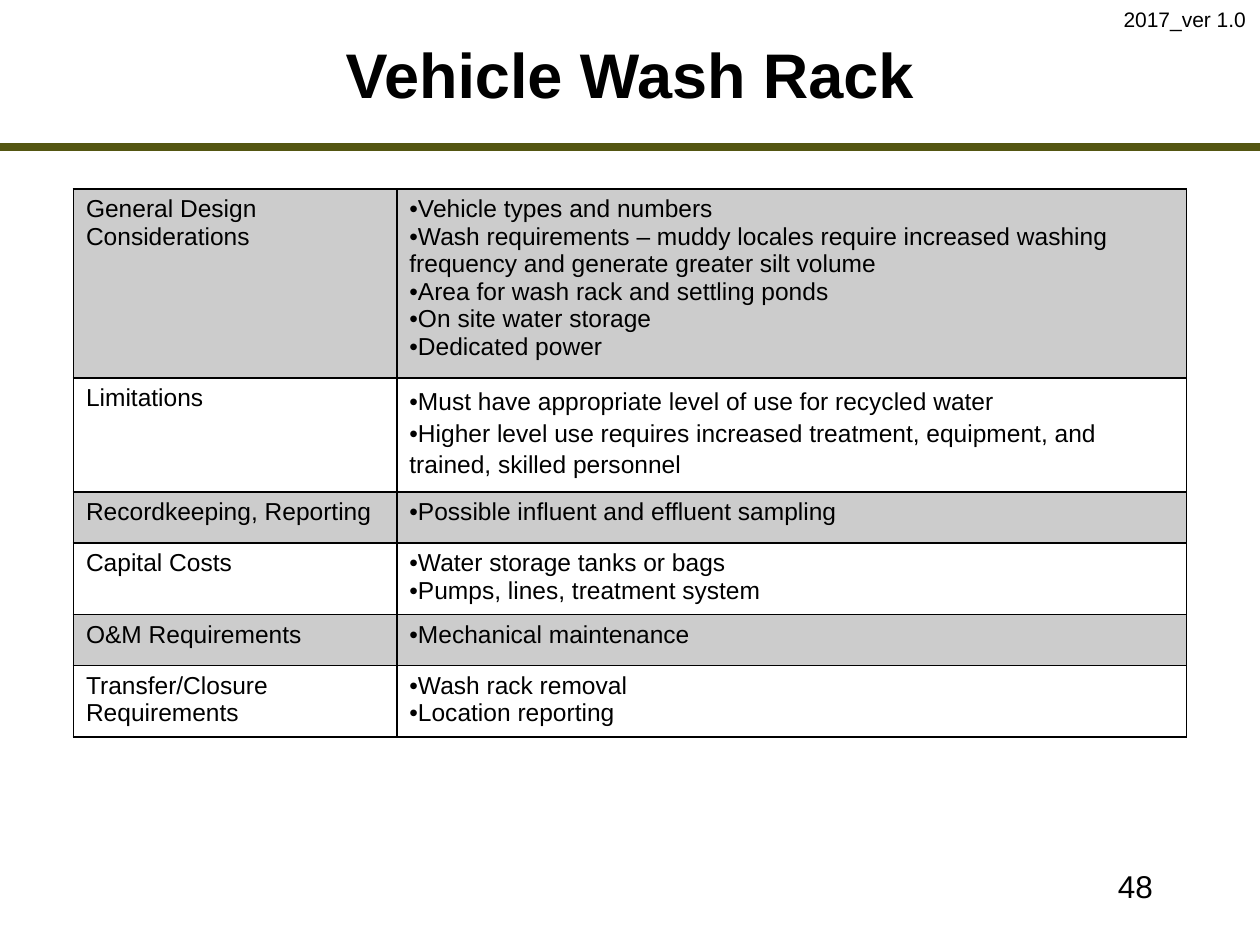
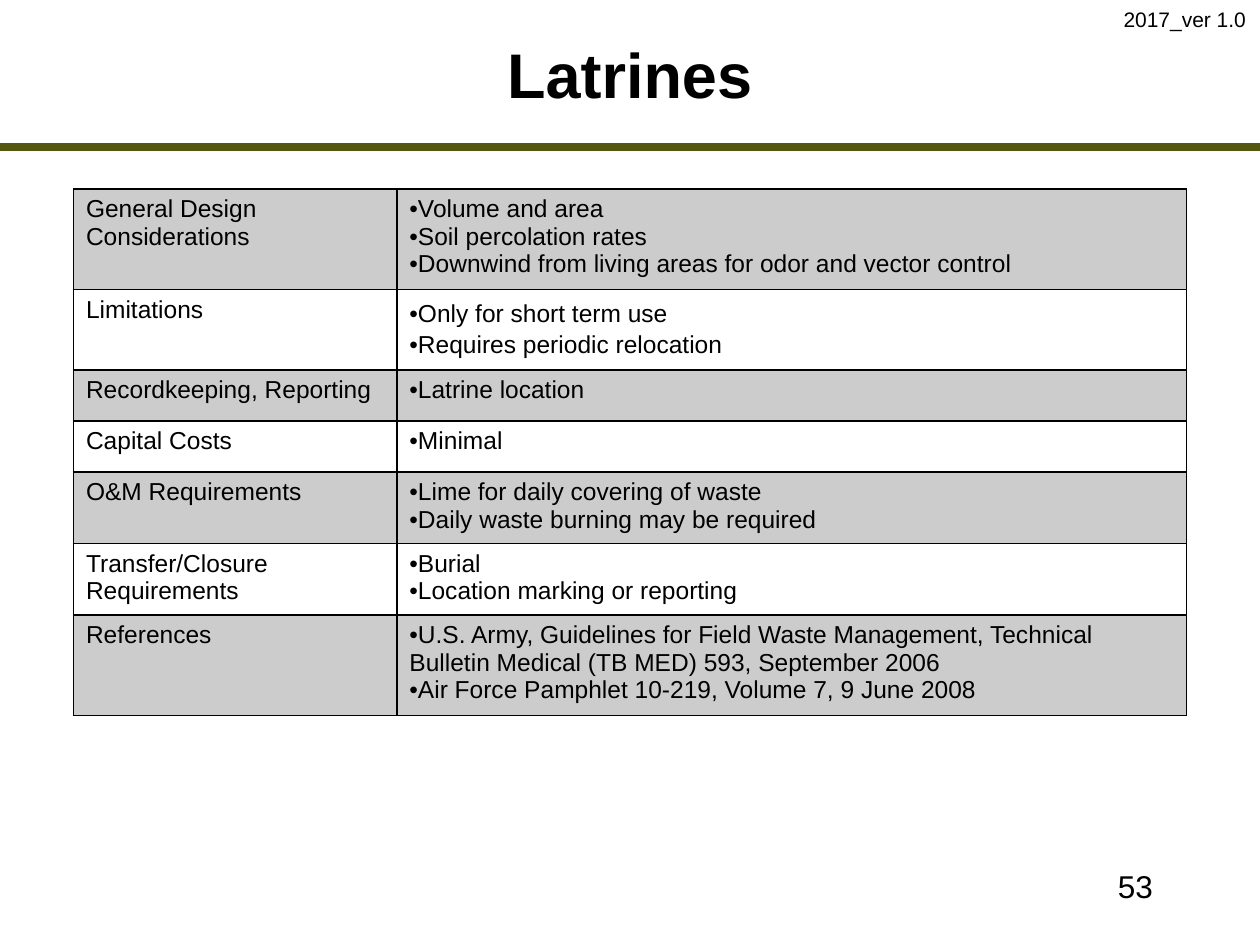
from dataclasses import dataclass

from lxml import etree
from pptx import Presentation
from pptx import util as u
from pptx.dml.color import RGBColor
from pptx.enum import shapes, text
from pptx.oxml import ns

COLORS = {"ink": "000000", "band": "545612"}
FONT = "Arial"
SHADE_ALPHA = 20
BORDER_WIDTH = u.Pt(1)
SLIDE_WIDTH, SLIDE_HEIGHT = u.Cm(25.4), u.Cm(19.05)
BAND_TOP = u.Cm(2.97)
TABLE_LEFT, TABLE_TOP = u.Cm(1.48), u.Cm(3.81)
COLUMN_WIDTHS = (u.Cm(6.52), u.Cm(15.92))


@dataclass(frozen=True)
class TextStyle:
    size: int
    bold: bool = False
    align: text.PP_ALIGN = text.PP_ALIGN.LEFT
    anchor: text.MSO_ANCHOR = text.MSO_ANCHOR.TOP
    wrap: bool = True


@dataclass(frozen=True)
class Box:
    left: float
    top: float
    width: float
    height: float
    style: TextStyle


@dataclass(frozen=True)
class Topic:
    heading: str
    points: tuple[str, ...]
    height: float
    line_spacing: float | None = None


@dataclass(frozen=True)
class Facility:
    title: str
    page: int
    topics: tuple[Topic, ...]


CELL_STYLE = TextStyle(14)
TITLE = Box(2.96, 0.43, 19.47, 2.11,
            TextStyle(36, True, text.PP_ALIGN.CENTER, text.MSO_ANCHOR.MIDDLE))
PAGE_NUMBER = Box(18.21, 17.35, 5.28, 1.27, TextStyle(18, align=text.PP_ALIGN.RIGHT))
VERSION = Box(22.4, 0, 3, 0.76, TextStyle(12, wrap=False))

FACILITIES = (
    Facility("Vehicle Wash Rack", 48, (
        Topic("General Design Considerations", (
            "Vehicle types and numbers",
            "Wash requirements – muddy locales require increased washing "
            "frequency and generate greater silt volume",
            "Area for wash rack and settling ponds",
            "On site water storage",
            "Dedicated power"), 3.81),
        Topic("Limitations", (
            "Must have appropriate level of use for recycled water",
            "Higher level use requires increased treatment, equipment, and "
            "trained, skilled personnel"), 2.3, 1.15),
        Topic("Recordkeeping, Reporting", ("Possible influent and effluent sampling",), 1.03),
        Topic("Capital Costs", (
            "Water storage tanks or bags",
            "Pumps, lines, treatment system"), 1.44),
        Topic("O&M Requirements", ("Mechanical maintenance",), 1.03),
        Topic("Transfer/Closure Requirements", (
            "Wash rack removal",
            "Location reporting"), 1.44),
    )),
    Facility("Latrines", 53, (
        Topic("General Design Considerations", (
            "Volume and area",
            "Soil percolation rates",
            "Downwind from living areas for odor and vector control"), 2.03),
        Topic("Limitations", (
            "Only for short term use",
            "Requires periodic relocation"), 1.62, 1.15),
        Topic("Recordkeeping, Reporting", ("Latrine location",), 1.03),
        Topic("Capital Costs", ("Minimal",), 1.03),
        Topic("O&M Requirements", (
            "Lime for daily covering of waste",
            "Daily waste burning may be required"), 1.44),
        Topic("Transfer/Closure Requirements", (
            "Burial",
            "Location marking or reporting"), 1.44),
        Topic("References", (
            "U.S. Army, Guidelines for Field Waste Management, Technical "
            "Bulletin Medical (TB MED) 593, September 2006",
            "Air Force Pamphlet 10-219, Volume 7, 9 June 2008"), 2.03),
    )),
)


def rgb(name: str) -> RGBColor:
    return RGBColor.from_string(COLORS[name])


def format_runs(paragraph, style: TextStyle) -> None:
    paragraph.alignment = style.align
    for run in paragraph.runs:
        run.font.name = FONT
        run.font.size = u.Pt(style.size)
        run.font.bold = style.bold
        run.font.color.rgb = rgb("ink")


def add_label(slide, box: Box, wording: str) -> None:
    label = slide.shapes.add_textbox(
        *(u.Cm(length) for length in (box.left, box.top, box.width, box.height)))
    frame = label.text_frame
    frame.text = wording
    frame.word_wrap = box.style.wrap
    frame.vertical_anchor = box.style.anchor
    if not box.style.wrap:
        frame.auto_size = text.MSO_AUTO_SIZE.SHAPE_TO_FIT_TEXT
    format_runs(frame.paragraphs[0], box.style)


def add_band(slide) -> None:
    band = slide.shapes.add_connector(
        shapes.MSO_CONNECTOR.STRAIGHT, 0, BAND_TOP, SLIDE_WIDTH, BAND_TOP)
    band.line.color.rgb = rgb("band")
    band.line.width = u.Pt(4.5)
    etree.SubElement(band._element.spPr, ns.qn("a:effectLst"))


def add_bullet(paragraph) -> None:
    properties = paragraph._p.get_or_add_pPr()
    properties.set("marL", "0")
    properties.set("indent", "0")
    etree.SubElement(properties, ns.qn("a:buFont"), typeface=FONT)
    etree.SubElement(properties, ns.qn("a:buChar"), char="•")


def draw_borders(cell) -> None:
    properties = cell._tc.get_or_add_tcPr()
    for side in ("lnL", "lnR", "lnT", "lnB"):
        border = etree.SubElement(properties, ns.qn(f"a:{side}"), w=str(BORDER_WIDTH))
        fill = etree.SubElement(border, ns.qn("a:solidFill"))
        etree.SubElement(fill, ns.qn("a:srgbClr"), val=COLORS["ink"])


def fill_cell(cell, shaded: bool) -> None:
    if not shaded:
        cell.fill.background()
        return
    cell.fill.solid()
    cell.fill.fore_color.rgb = rgb("ink")
    shade = cell._tc.tcPr.find(f"{ns.qn('a:solidFill')}/{ns.qn('a:srgbClr')}")
    etree.SubElement(shade, ns.qn("a:alpha"), val=str(SHADE_ALPHA * 1000))


def write_topic(heading_cell, points_cell, topic: Topic, shaded: bool) -> None:
    heading_cell.text_frame.text = topic.heading
    points_cell.text_frame.text = "\n".join(topic.points)
    for point in points_cell.text_frame.paragraphs:
        add_bullet(point)
        point.line_spacing = topic.line_spacing
    for cell in (heading_cell, points_cell):
        draw_borders(cell)
        fill_cell(cell, shaded)
        for paragraph in cell.text_frame.paragraphs:
            format_runs(paragraph, CELL_STYLE)


def add_topics(slide, topics: tuple[Topic, ...]) -> None:
    heights = [u.Cm(topic.height) for topic in topics]
    table = slide.shapes.add_table(
        len(topics), len(COLUMN_WIDTHS), TABLE_LEFT, TABLE_TOP,
        sum(COLUMN_WIDTHS), sum(heights)).table
    table.first_row = False
    table.horz_banding = False
    for column, width in zip(table.columns, COLUMN_WIDTHS):
        column.width = width
    for index, (topic, height) in enumerate(zip(topics, heights)):
        table.rows[index].height = height
        write_topic(table.cell(index, 0), table.cell(index, 1), topic, index % 2 == 0)


def add_facility(deck, facility: Facility) -> None:
    slide = deck.slides.add_slide(deck.slide_layouts[6])
    add_band(slide)
    add_topics(slide, facility.topics)
    add_label(slide, TITLE, facility.title)
    add_label(slide, PAGE_NUMBER, str(facility.page))
    add_label(slide, VERSION, "2017_ver 1.0")


def main() -> None:
    deck = Presentation()
    deck.slide_width, deck.slide_height = SLIDE_WIDTH, SLIDE_HEIGHT
    for facility in FACILITIES:
        add_facility(deck, facility)
    deck.save("out.pptx")


if __name__ == "__main__":
    main()
